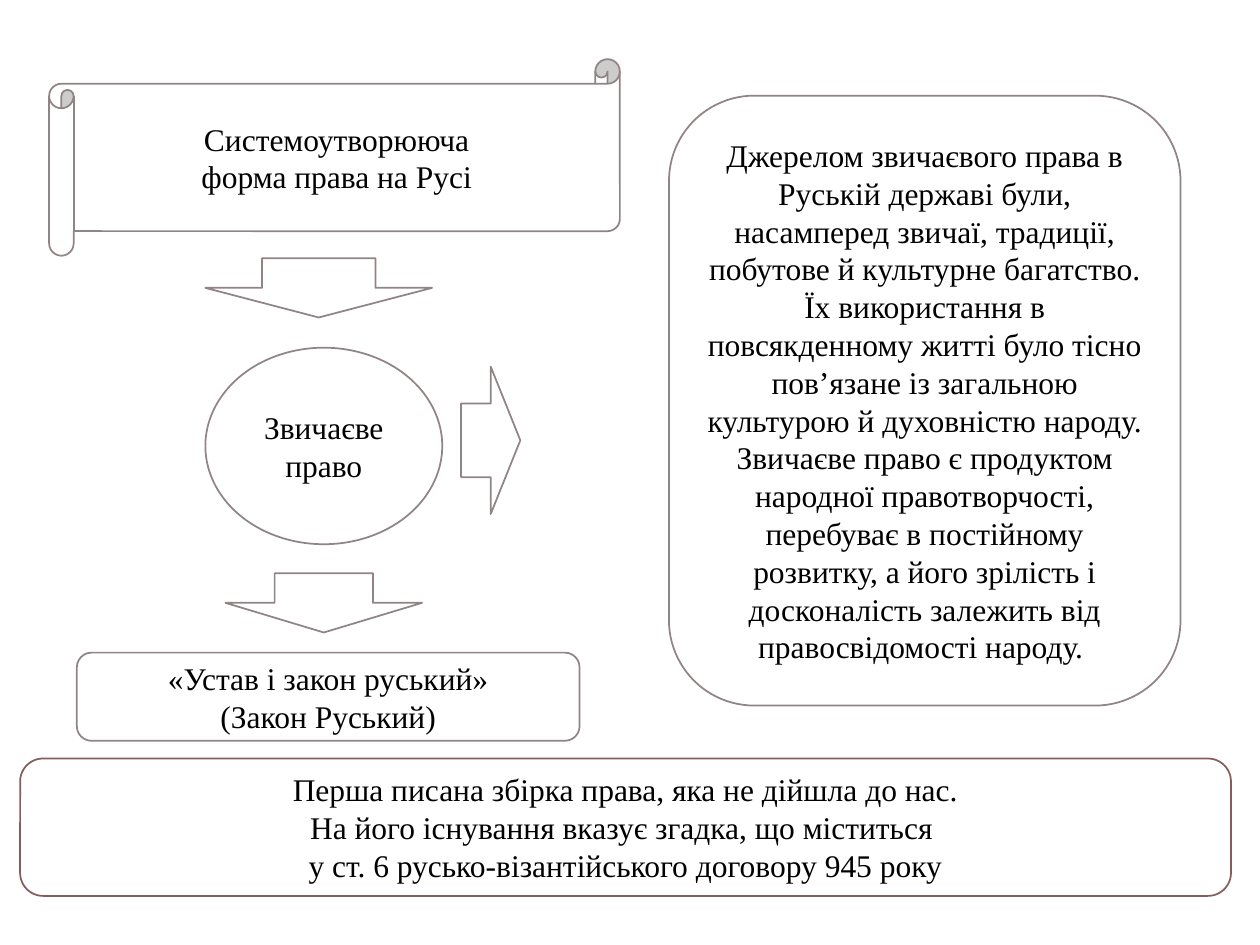
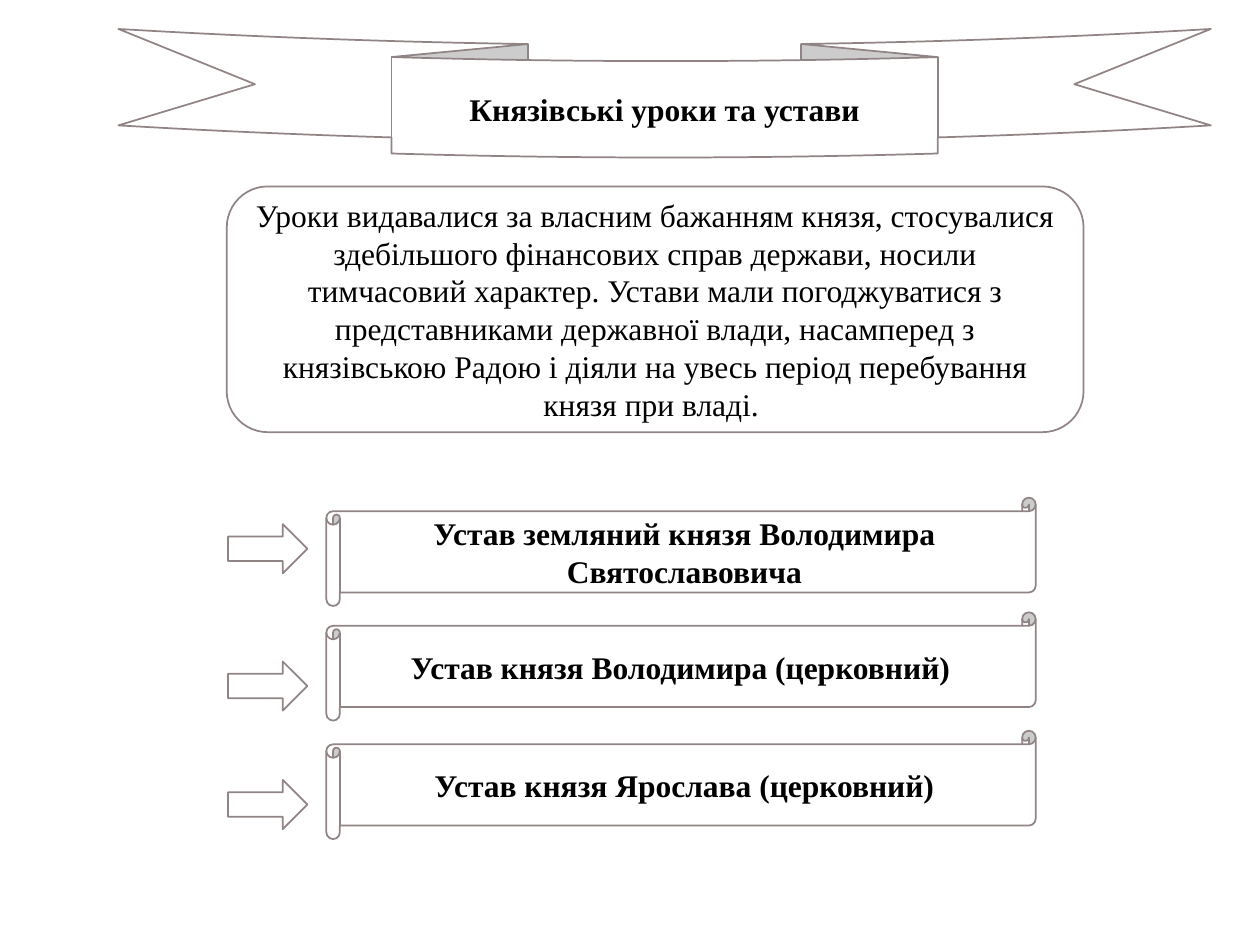
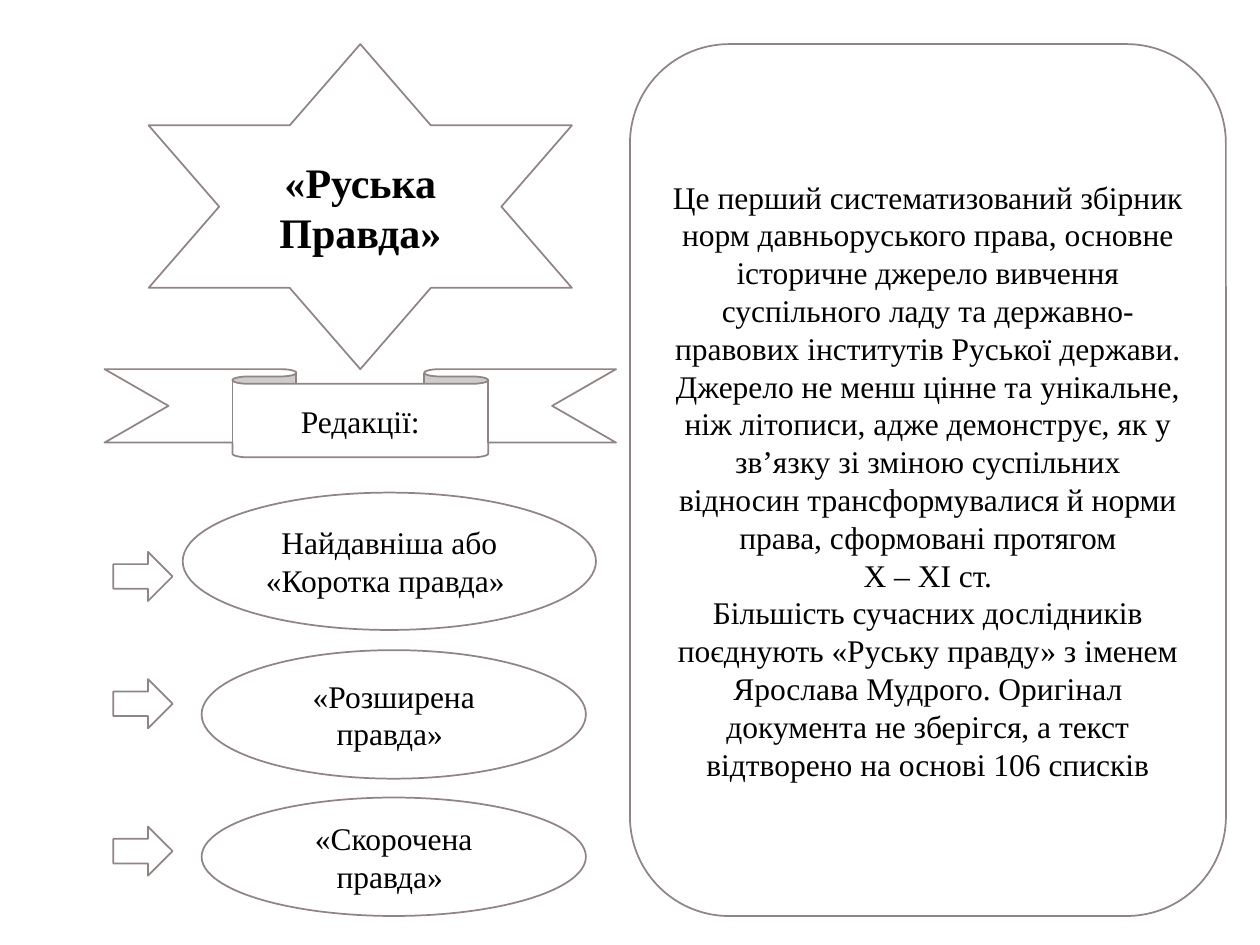
"""Build three slides on the sources of law in Rus."""

from dataclasses import dataclass

from pptx import Presentation
from pptx.dml.color import RGBColor
from pptx.enum.shapes import MSO_SHAPE
from pptx.enum.text import MSO_ANCHOR, MSO_AUTO_SIZE, PP_ALIGN
from pptx.shapes.autoshape import Shape
from pptx.slide import Slide
from pptx.text.text import TextFrame
from pptx.util import Inches, Pt

WIDTH, HEIGHT = Inches(10), Inches(7.5)
COLUMN, ROW = WIDTH / 100, HEIGHT / 75
WHITE = RGBColor(0xFF, 0xFF, 0xFF)
BLACK = RGBColor(0x00, 0x00, 0x00)
GREY = RGBColor(0x91, 0x84, 0x85)
MAROON = RGBColor(0x85, 0x5D, 0x5D)
FONT = "Times New Roman"
TITLE_ONLY, BLANK = 5, 6


@dataclass(frozen=True)
class Area:
    """A rectangle in grid columns and rows."""

    column: float
    row: float
    columns: float
    rows: float

    def emu(self) -> tuple[int, int, int, int]:
        """Return left, top, width and height in EMU."""
        return (round(self.column * COLUMN), round(self.row * ROW),
                round(self.columns * COLUMN), round(self.rows * ROW))


@dataclass(frozen=True)
class Figure:
    """An outlined preset shape with optional centred text."""

    outline: MSO_SHAPE
    area: Area
    wording: str = ""
    bold: bool = False
    border: RGBColor = GREY


@dataclass(frozen=True)
class Heading:
    """A slide title lying on an emblem."""

    emblem: Figure
    area: Area
    wording: str
    size: int


@dataclass(frozen=True)
class Page:
    """The content of one slide."""

    figures: list[Figure]
    heading: Heading | None = None


def arrows(column: float, columns: float, rows: list[float]) -> list[Figure]:
    """Return a column of small arrows pointing right."""
    return [Figure(MSO_SHAPE.RIGHT_ARROW, Area(column, row, columns, 3.9)) for row in rows]


SOURCES = Page([
    Figure(MSO_SHAPE.HORIZONTAL_SCROLL, Area(3.9, 4.7, 45.3, 15.6),
           "Системоутворююча \nформа права на Русі "),
    Figure(MSO_SHAPE.DOWN_ARROW, Area(16.3, 20.5, 18, 4.7)),
    Figure(MSO_SHAPE.OVAL, Area(16.3, 27.6, 18.8, 15.6), "Звичаєве право"),
    Figure(MSO_SHAPE.ROUNDED_RECTANGLE, Area(53.1, 7.6, 40.6, 48.4),
           "Джерелом звичаєвого права в Руській державі були, насамперед звичаї, традиції, "
           "побутове й культурне багатство. Їх використання в повсякденному житті було тісно "
           "пов’язане із загальною культурою й духовністю народу. Звичаєве право є продуктом "
           "народної правотворчості, перебуває в постійному розвитку, а його зрілість і "
           "досконалість залежить від правосвідомості народу. "),
    Figure(MSO_SHAPE.RIGHT_ARROW, Area(36.6, 29.1, 4.7, 11.7)),
    Figure(MSO_SHAPE.ROUNDED_RECTANGLE, Area(6.1, 51.8, 39.9, 7),
           "«Устав і закон руський»\n(Закон Руський)"),
    Figure(MSO_SHAPE.DOWN_ARROW, Area(17.9, 45.5, 15.6, 4.7)),
    Figure(MSO_SHAPE.ROUNDED_RECTANGLE, Area(1.6, 60.2, 96.1, 10.9),
           "Перша писана збірка права, яка не дійшла до нас.\n"
           "На його існування вказує згадка, що міститься \n"
           "у ст. 6 русько-візантійського договору 945 року", border=MAROON),
])

STATUTES = Page(
    [
        Figure(MSO_SHAPE.ROUNDED_RECTANGLE, Area(18, 14.8, 68, 19.5),
               "Уроки видавалися за власним бажанням князя, стосувалися здебільшого фінансових "
               "справ держави, носили тимчасовий характер. Устави мали погоджуватися з "
               "представниками державної влади, насамперед з князівською Радою і діяли на увесь "
               "період перебування князя при владі. "),
        *arrows(18.1, 6.3, [41.6, 52.5, 61.9]),
        *(Figure(MSO_SHAPE.HORIZONTAL_SCROLL, Area(25.9, row, 56.3, 8.6), statute, bold=True)
          for row, statute in [
              (39.5, "Устав земляний князя Володимира Святославовича"),
              (48.6, "Устав князя Володимира (церковний) "),
              (58, "Устав князя Ярослава (церковний)"),
          ]),
    ],
    Heading(Figure(MSO_SHAPE.CURVED_DOWN_RIBBON, Area(9.4, 2.3, 86.7, 10.2)),
            Area(31.1, 4.8, 43.3, 7.7), "Князівські уроки та устави", 18),
)

RUSKA_PRAVDA = Page(
    [
        Figure(MSO_SHAPE.ROUNDED_RECTANGLE, Area(50, 3.5, 47.3, 69.2),
               "Це перший систематизований збірник норм давньоруського права, основне історичне "
               "джерело вивчення суспільного ладу та державно-правових інститутів Руської "
               "держави. Джерело не менш цінне та унікальне, ніж літописи, адже демонструє, як "
               "у зв’язку зі зміною суспільних відносин трансформувалися й норми права, "
               "сформовані протягом\nX – XI ст.\n"
               "Більшість сучасних дослідників поєднують «Руську правду» з іменем Ярослава "
               "Мудрого. Оригінал документа не зберігся, а текст відтворено на основі "
               "106 списків"),
        Figure(MSO_SHAPE.DOWN_RIBBON, Area(8.3, 29.3, 40.6, 7), "Редакції:"),
        *arrows(9, 4.7, [43.8, 53.9, 65.6]),
        Figure(MSO_SHAPE.OVAL, Area(14.5, 39.1, 32.8, 10.9), "Найдавніша або «Коротка правда» "),
        Figure(MSO_SHAPE.OVAL, Area(16, 51.6, 30.5, 10.2), "«Розширена правда» "),
        Figure(MSO_SHAPE.OVAL, Area(16, 63.3, 30.5, 9.4), "«Скорочена правда» "),
    ],
    Heading(Figure(MSO_SHAPE.STAR_6_POINT, Area(11.8, 3.5, 33.6, 25.8)),
            Area(17.4, 9.9, 22.4, 13), "«Руська Правда»", 24),
)


def write(frame: TextFrame, wording: str, size: int, bold: bool) -> None:
    """Fill a frame with centred text, one paragraph a line."""
    frame.text = wording
    frame.word_wrap = True
    frame.vertical_anchor = MSO_ANCHOR.MIDDLE
    for paragraph in frame.paragraphs:
        paragraph.alignment = PP_ALIGN.CENTER
        for run in paragraph.runs:
            run.font.name = FONT
            run.font.size = Pt(size)
            run.font.bold = bold
            run.font.color.rgb = BLACK


def draw(slide: Slide, figure: Figure) -> Shape:
    """Draw one outlined figure and return it."""
    shape = slide.shapes.add_shape(figure.outline, *figure.area.emu())
    shape.shadow.inherit = False
    shape.fill.solid()
    shape.fill.fore_color.rgb = WHITE
    shape.line.color.rgb = figure.border
    shape.line.width = Pt(1)
    if figure.wording:
        write(shape.text_frame, figure.wording, 18, figure.bold)
    return shape


def draw_heading(slide: Slide, heading: Heading) -> None:
    """Place the title in front of its emblem."""
    title = slide.shapes.title
    title.left, title.top, title.width, title.height = heading.area.emu()
    write(title.text_frame, heading.wording, heading.size, True)
    title.text_frame.auto_size = MSO_AUTO_SIZE.NONE
    emblem = draw(slide, heading.emblem)
    title.element.addprevious(emblem.element)


def main() -> None:
    """Build and save the presentation."""
    presentation = Presentation()
    presentation.slide_width, presentation.slide_height = WIDTH, HEIGHT
    for page in (SOURCES, STATUTES, RUSKA_PRAVDA):
        layout = TITLE_ONLY if page.heading else BLANK
        slide = presentation.slides.add_slide(presentation.slide_layouts[layout])
        if page.heading:
            draw_heading(slide, page.heading)
        for figure in page.figures:
            draw(slide, figure)
    presentation.save("out.pptx")


if __name__ == "__main__":
    main()
